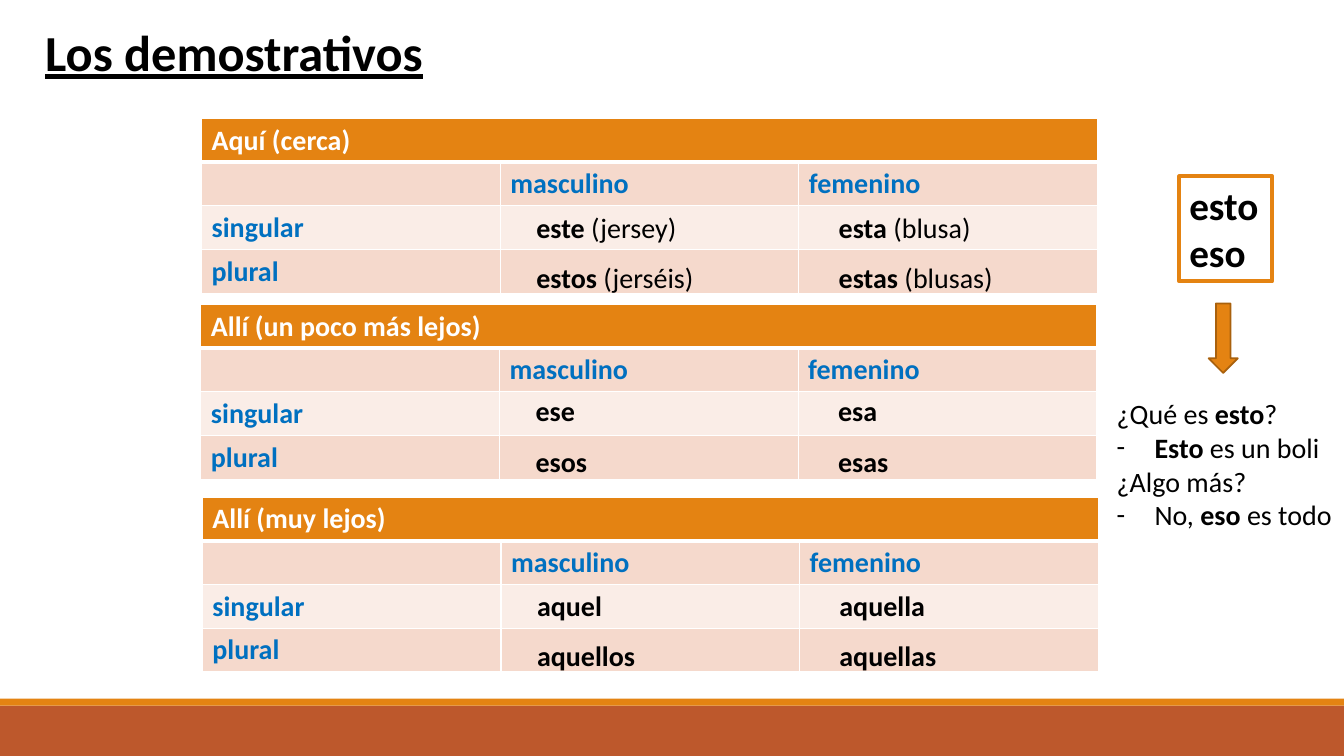
from lxml.etree import SubElement
from pptx import Presentation
from pptx.dml.color import RGBColor
from pptx.enum.shapes import MSO_SHAPE
from pptx.enum.text import MSO_ANCHOR
from pptx.oxml.ns import qn
from pptx.util import Pt

ORANGE, RUST, WHITE, BLACK, BLUE = "E48312", "BD582C", "FFFFFF", "000000", "0070C0"
DARK, PALE = "F5D9CC", "FAEDE7"


def paint(fmt, color):
    """Give a fill, or the fill of a line, one solid colour."""
    fmt.solid()
    fmt.fore_color.rgb = RGBColor.from_string(color)


def write(frame, lines, size=20, color=BLACK, bold=False, under=None, space=None, tab=None, dash=0):
    """Fill a frame with lines; *stars* mark bold, and "- " opens a dash item."""
    for num, line in enumerate(lines):
        para = frame.paragraphs[0] if num == 0 else frame.add_paragraph()
        if space:
            para.line_spacing = space
        props = para._p.get_or_add_pPr()
        if dash and line.startswith("- "):
            line = line[2:]
            props.set("marL", str(Pt(dash)))
            props.set("indent", str(-Pt(dash)))
            SubElement(props, qn("a:buFont"), typeface="Calibri")
            SubElement(props, qn("a:buChar"), char="-")
        if tab:
            stops = SubElement(props, qn("a:tabLst"))
            SubElement(stops, qn("a:tab"), pos=str(Pt(tab)), algn="l")
        for part, text in enumerate(line.split("*")):
            if text:
                run = para.add_run()
                run.text = text
                font = run.font
                font.name, font.size = "Calibri", Pt(size)
                font.bold = bold or part % 2 == 1
                font.underline = under
                font.color.rgb = RGBColor.from_string(color)


def label(slide, box, lines, **style):
    """Place a wrapped text box."""
    frame = slide.shapes.add_textbox(*map(Pt, box)).text_frame
    frame.word_wrap = True
    write(frame, lines, **style)


def block(slide, kind, box, fill, line=None, width=1):
    """Place a flat preset shape and return it."""
    shape = slide.shapes.add_shape(kind, *map(Pt, box))
    shape.shadow.inherit = False
    paint(shape.fill, fill)
    if line:
        paint(shape.line.fill, line)
        shape.line.width = Pt(width)
    else:
        shape.line.fill.background()
    return shape


def border(cell, row):
    """Draw white cell borders, thick below the heading row."""
    props = cell._tc.get_or_add_tcPr()
    thick = {(0, "B"), (1, "T")}
    for side in "LRTB":
        width = 3 if (row, side) in thick else 1
        edge = SubElement(props, qn("a:ln" + side), w=str(Pt(width)))
        fill = SubElement(edge, qn("a:solidFill"))
        SubElement(fill, qn("a:srgbClr"), val=WHITE)


def grid(slide, box, head):
    """Place one table of genders and numbers under a heading."""
    table = slide.shapes.add_table(4, 3, *map(Pt, box)).table
    rows = [[head, "", ""], ["", "masculino", "femenino"],
            ["singular", "", ""], ["plural", "", ""]]
    fills = [ORANGE, DARK, PALE, DARK]
    for row, texts in enumerate(rows):
        for col, text in enumerate(texts):
            cell = table.cell(row, col)
            border(cell, row)
            paint(cell.fill, fills[row])
            write(cell.text_frame, [text], color=BLUE if row else WHITE, bold=True)
    table.cell(0, 0).merge(table.cell(0, 2))


def group(slide, box, head, words, shift):
    """Place a table with its demonstratives laid over the lower rows."""
    left, top, width, high = box
    grid(slide, box, head)
    label(slide, (left + 232, top + shift, 367, 78), words, space=1.5, tab=216)


def neuter(slide, box):
    """Place the neuter forms, the arrow and the sample dialogue."""
    left, top, width, high = box
    frame = block(slide, MSO_SHAPE.RECTANGLE, (left + 51.8, top, 66.2, 75),
                  WHITE, ORANGE, 3).text_frame
    frame.vertical_anchor = MSO_ANCHOR.TOP
    write(frame, ["esto", "eso"], size=28, bold=True)
    for para in frame.paragraphs:
        para.alignment = 1
    block(slide, MSO_SHAPE.DOWN_ARROW, (left + 72.7, top + 90.7, 20.9, 49.7),
          ORANGE, "A9610D", 1.25)
    label(slide, (left, top + 154, width, high - 154),
          ["¿Qué es *esto*?", "- *Esto* es un boli", "¿Algo más?", "- No, *eso* es todo"],
          dash=27)


def footer(slide, box):
    """Place the two bands at the foot."""
    left, top, width, high = box
    block(slide, MSO_SHAPE.RECTANGLE, (left, top + 5, width, high - 5), RUST)
    block(slide, MSO_SHAPE.RECTANGLE, (left, top, width, 5), ORANGE)


def main():
    """Build and save the slide."""
    deck = Presentation()
    deck.slide_width, deck.slide_height = Pt(960), Pt(540)
    slide = deck.slides.add_slide(deck.slide_layouts[6])
    footer(slide, (0, 499, 960, 41))
    label(slide, (25.2, 11.5, 359.3, 51), ["Los demostrativos"], size=36, bold=True, under=True)
    groups = [
        (144, 84.5, "Aquí (cerca)", 50.2,
         ["*este* (jersey)\t*esta* (blusa)", "*estos* (jerséis)\t*estas* (blusas)"]),
        (143.5, 217.4, "Allí (un poco más lejos)", 48.3, ["*ese\tesa*", "*esos\tesas*"]),
        (144.5, 355, "Allí (muy lejos)", 49.6, ["*aquel\taquella*", "*aquellos\taquellas*"]),
    ]
    for left, top, head, shift, words in groups:
        group(slide, (left, top, 640, 124.6), head, words, shift)
    neuter(slide, (790.6, 126, 169.4, 258.4))
    deck.save("out.pptx")


if __name__ == "__main__":
    main()
